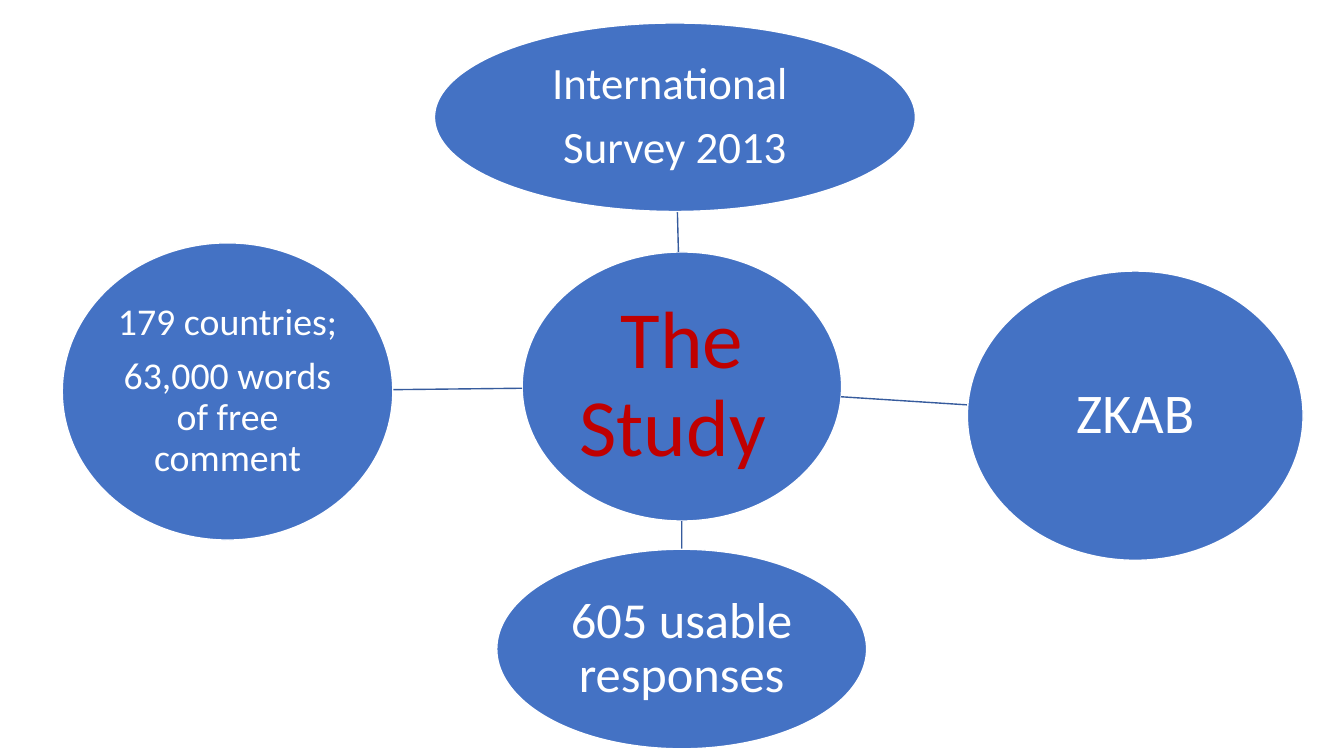
import dataclasses
import math

import lxml.etree
import pptx
import pptx.dml.color
import pptx.enum.shapes
import pptx.enum.text
import pptx.oxml.ns
import pptx.util

Cm = pptx.util.Cm
Pt = pptx.util.Pt

COLORS = {"fill": "4472C4", "edge": "FFFFFF", "spoke": "365B9D", "text": "FFFFFF", "hub": "C00000"}


@dataclasses.dataclass
class Node:
    left: float
    top: float
    width: float
    height: float
    text: str
    size: float
    color: str = "text"
    inset: float = 0.06

    def mid(self) -> tuple[float, float]:
        return self.left + self.width / 2, self.top + self.height / 2

    def rim(self, other: "Node") -> tuple[float, float]:
        x, y = self.mid()
        far_x, far_y = other.mid()
        dx, dy = far_x - x, far_y - y
        scale = 1 / math.hypot(2 * dx / self.width, 2 * dy / self.height)
        return x + dx * scale, y + dy * scale


HUB = Node(13.16, 6.35, 8.05, 6.78, "The Study ", 58, "hub", 0.1)
NODES = [
    Node(10.95, 0.58, 12.12, 4.75, "International \nSurvey 2013", 32),
    Node(24.38, 6.83, 8.46, 7.29, "ZKAB", 40),
    Node(12.52, 13.84, 9.32, 5.03, "605 usable responses", 36),
    Node(1.57, 6.12, 8.33, 7.49, "179 countries;\n63,000 words of free comment", 27),
]


def color(name: str) -> pptx.dml.color.RGBColor:
    return pptx.dml.color.RGBColor.from_string(COLORS[name])


def draw_node(slide, node: Node) -> None:
    box = map(Cm, (node.left, node.top, node.width, node.height))
    shape = slide.shapes.add_shape(pptx.enum.shapes.MSO_SHAPE.OVAL, *box)
    shape.shadow.inherit = False
    shape.fill.solid()
    shape.fill.fore_color.rgb = color("fill")
    shape.line.color.rgb = color("edge")
    shape.line.width = Pt(1)
    frame = shape.text_frame
    frame.word_wrap = True
    frame.vertical_anchor = pptx.enum.text.MSO_ANCHOR.MIDDLE
    frame.margin_left = frame.margin_right = Cm(node.inset)
    frame.margin_top = frame.margin_bottom = Cm(node.inset)
    frame.text = node.text
    for para in frame.paragraphs:
        para.alignment = pptx.enum.text.PP_ALIGN.CENTER
        para.line_spacing = 0.9
        para.space_after = Pt(0.35 * node.size)
        for run in para.runs:
            run.font.name = "Calibri"
            run.font.size = Pt(node.size)
            run.font.color.rgb = color(node.color)


def draw_spoke(slide, node: Node) -> None:
    ends = map(Cm, HUB.rim(node) + node.rim(HUB))
    spoke = slide.shapes.add_connector(pptx.enum.shapes.MSO_CONNECTOR.STRAIGHT, *ends)
    spoke.line.color.rgb = color("spoke")
    spoke.line.width = Pt(1)
    lxml.etree.SubElement(spoke.element.spPr, pptx.oxml.ns.qn("a:effectLst"))


def main() -> None:
    """Draw the study as a hub with four linked ovals."""
    deck = pptx.Presentation()
    deck.slide_width, deck.slide_height = Cm(33.87), Cm(19.05)
    slide = deck.slides.add_slide(deck.slide_layouts[6])
    draw_node(slide, HUB)
    for node in NODES:
        draw_spoke(slide, node)
        draw_node(slide, node)
    deck.save("out.pptx")


if __name__ == "__main__":
    main()
